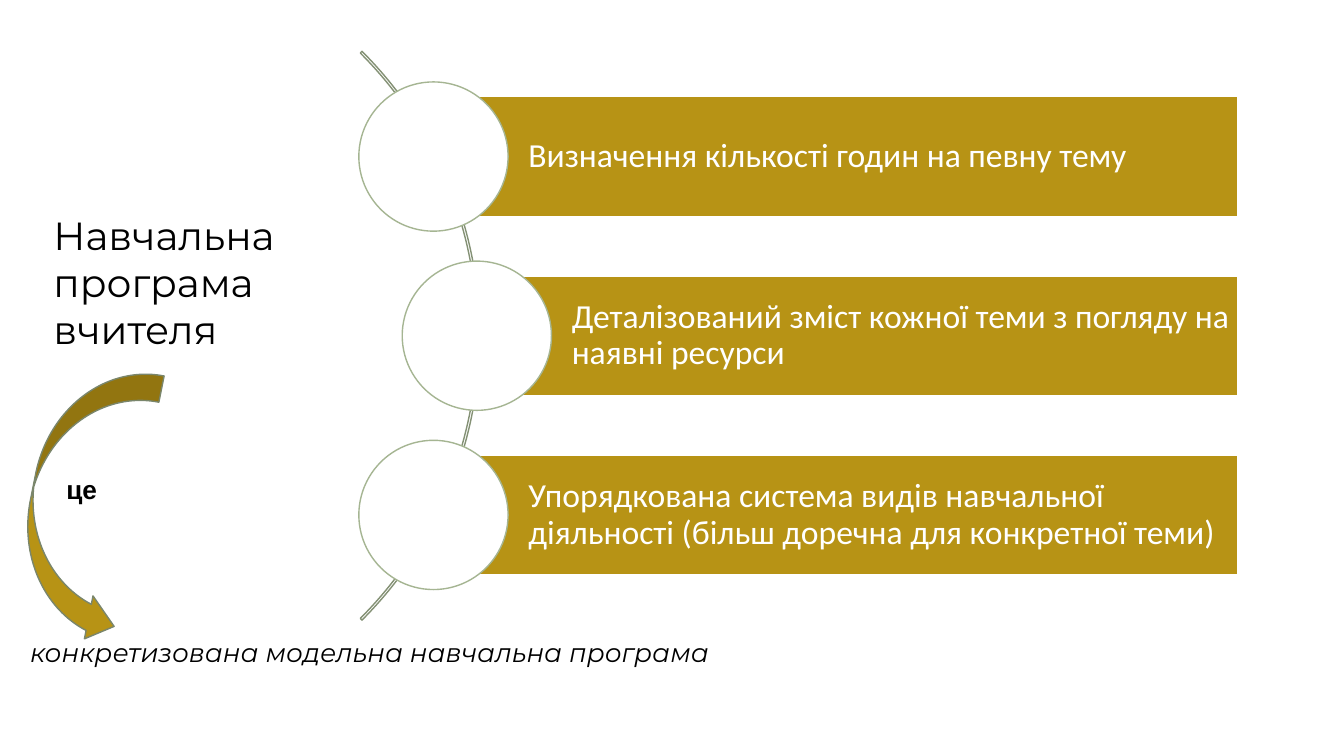
from lxml import etree  # noqa: F401
from pptx import Presentation
from pptx.dml.color import RGBColor
from pptx.enum import shapes, text
from pptx.util import Pt

GOLD = RGBColor(0xB7, 0x93, 0x15)
WHITE = RGBColor(0xFF, 0xFF, 0xFF)
BLACK = RGBColor(0, 0, 0)
ARC_GREEN = RGBColor(0x84, 0x91, 0x75)
CIRCLE_GREEN = RGBColor(0xA5, 0xB5, 0x92)
ARROW_GREEN = RGBColor(0x7A, 0x86, 0x6C)

# Programme parts: bar left edge (also the circle's centre) and wording
STEPS = [
    (309.6, "Визначення кількості годин на певну тему"),
    (340.6, "Деталізований зміст кожної теми з погляду на наявні ресурси"),
    (309.6, "Упорядкована система видів навчальної діяльності "
            "(більш доречна для конкретної теми)"),
]
MIDDLE_Y, ROW_PITCH = 239.8, 128
BAR_RIGHT, BAR_HEIGHT = 884.2, 85.4
CIRCLE_SIZE = 106.6
ARC_CENTRE_X, ARC_SIZE = 55.4, 574.6


def write(frame, wording, size, font="Montserrat", color=BLACK, bold=False,
          italic=False, spacing=1.0, anchor=text.MSO_ANCHOR.TOP, wrap=True,
          insets=(7.2, 3.6, 7.2, 3.6)):
    frame.word_wrap = wrap
    frame.auto_size = text.MSO_AUTO_SIZE.NONE
    frame.vertical_anchor = anchor
    (frame.margin_left, frame.margin_top,
     frame.margin_right, frame.margin_bottom) = map(Pt, insets)
    paragraph = frame.paragraphs[0]
    paragraph.alignment = text.PP_ALIGN.LEFT
    paragraph.line_spacing = spacing
    paragraph.space_before = Pt(0)
    run = paragraph.add_run()
    run.text = wording
    run.font.name, run.font.size = font, Pt(size)
    run.font.bold, run.font.italic = bold, italic
    run.font.color.rgb = color


class ProgrammeSlide:
    def __init__(self, deck):
        self.slide = deck.slides.add_slide(deck.slide_layouts[5])
        self.line_width = Pt(1)

    def title(self, wording, left, top, width, height, **style):
        heading = self.slide.shapes.title
        heading.left, heading.top = Pt(left), Pt(top)
        heading.width, heading.height = Pt(width), Pt(height)
        write(heading.text_frame, wording, **style)

    def label(self, wording, left, top, width, height, **style):
        box = self.slide.shapes.add_textbox(
            Pt(left), Pt(top), Pt(width), Pt(height))
        write(box.text_frame, wording, **style)

    def shape(self, kind, left, top, width, height, line, fill=None,
              adjustments=(), rotation=0):
        figure = self.slide.shapes.add_shape(
            kind, Pt(left), Pt(top), Pt(width), Pt(height))
        figure.shadow.inherit = False
        if fill is None:
            figure.fill.background()
        else:
            figure.fill.solid()
            figure.fill.fore_color.rgb = fill
        figure.line.color.rgb = line
        figure.line.width = self.line_width
        for index, value in enumerate(adjustments):
            figure.adjustments[index] = value
        figure.rotation = rotation
        return figure

    def step(self, left, centre_y, wording):
        bar = self.shape(shapes.MSO_SHAPE.RECTANGLE, left,
                         centre_y - BAR_HEIGHT / 2, BAR_RIGHT - left,
                         BAR_HEIGHT, line=WHITE, fill=GOLD)
        write(bar.text_frame, wording, size=24, font="Calibri", color=WHITE,
              spacing=0.9, anchor=text.MSO_ANCHOR.MIDDLE,
              insets=(67.8, 4.8, 4.8, 4.8))
        radius = CIRCLE_SIZE / 2
        self.shape(shapes.MSO_SHAPE.OVAL, left - radius, centre_y - radius,
                   CIRCLE_SIZE, CIRCLE_SIZE, line=CIRCLE_GREEN, fill=WHITE)


def main():
    deck = Presentation()
    deck.slide_width, deck.slide_height = Pt(960), Pt(540)
    page = ProgrammeSlide(deck)

    # Arc with the three programme parts
    page.shape(shapes.MSO_SHAPE.BLOCK_ARC, ARC_CENTRE_X - ARC_SIZE / 2,
               MIDDLE_Y - ARC_SIZE / 2, ARC_SIZE, ARC_SIZE, line=ARC_GREEN,
               adjustments=(189, 27, 0.003))
    for row, (left, wording) in enumerate(STEPS):
        page.step(left, MIDDLE_Y + (row - 1) * ROW_PITCH, wording)

    # Term and its definition
    page.title("Навчальна програма вчителя", 31, 147, 219.6, 108.7, size=28)
    page.label("конкретизована модельна навчальна програма",
               14.4, 450.7, 783.4, 30.2, size=18.7, italic=True)
    page.label("це", 40.3, 334.8, 36.7, 30.2, size=18.7, font="Arial",
               bold=True, wrap=False)

    # Arrow from the term to the definition
    page.shape(shapes.MSO_SHAPE.CURVED_RIGHT_ARROW, 22.3, 259.2, 76.3, 198,
               line=ARROW_GREEN, fill=GOLD, adjustments=(0.25, 0.41, 0.25),
               rotation=11.3)

    deck.save("out.pptx")


if __name__ == "__main__":
    main()
